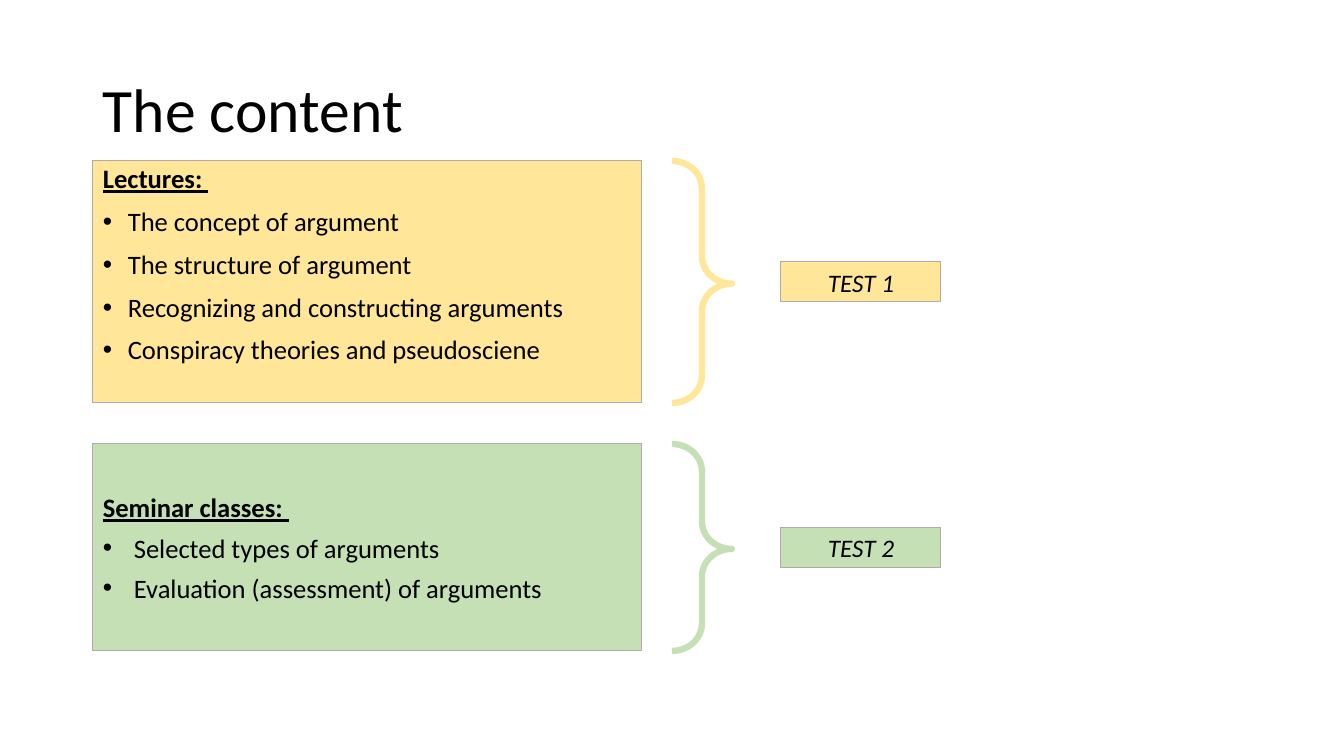
"""Build the course content slide: two topic boxes, each braced to its test."""
from lxml import etree
from pptx import Presentation
from pptx.dml.color import RGBColor
from pptx.enum.shapes import MSO_SHAPE
from pptx.enum.text import MSO_ANCHOR, PP_ALIGN
from pptx.oxml.ns import qn
from pptx.util import Pt

RECTANGLE, BRACE = MSO_SHAPE.RECTANGLE, MSO_SHAPE.RIGHT_BRACE
TOP, MIDDLE = MSO_ANCHOR.TOP, MSO_ANCHOR.MIDDLE
LEFT, CENTER = PP_ALIGN.LEFT, PP_ALIGN.CENTER

BLACK = RGBColor(0x00, 0x00, 0x00)
GRAY = RGBColor(0xAF, 0xAB, 0xAB)
YELLOW = RGBColor(0xFF, 0xE6, 0x99)
GREEN = RGBColor(0xC5, 0xE0, 0xB4)
FONT = "Calibri"

TITLE = "The content"
SECTIONS = [
    dict(heading="Lectures: ", test="TEST 1", color=YELLOW, top=161, height=242,
         anchor=TOP, indent=25, spacing=dict(line_spacing=0.9, space_before=Pt(10)),
         topics=["The concept of argument", "The structure of argument",
                 "Recognizing and constructing arguments",
                 "Conspiracy theories and pseudosciene"]),
    dict(heading="Seminar classes: ", test="TEST 2", color=GREEN, top=444, height=207,
         anchor=MIDDLE, indent=31, spacing=dict(space_after=Pt(6)),
         topics=["Selected types of arguments", "Evaluation (assessment) of arguments"]),
]

EMU_PER_PX = 914400 / 100.8
SLIDE_SIZE = (1344, 756)
TITLE_AREA = (93, 40, 1159, 146)
BOX_LEFT, BOX_WIDTH = 93, 549
BRACE_LEFT, BRACE_WIDTH = 672, 60
TEST_LEFT, TEST_WIDTH, TEST_HEIGHT = 781, 160, 40


def px(*lengths):
    return [round(length * EMU_PER_PX) for length in lengths]


def add_outlined(slide, preset, area, line_color, line_width, fill=None):
    shape = slide.shapes.add_shape(preset, *px(*area))
    shape.shadow.inherit = False
    if fill is None:
        shape.fill.background()
    else:
        shape.fill.solid()
        shape.fill.fore_color.rgb = fill
    shape.line.color.rgb = line_color
    shape.line.width = Pt(line_width)
    return shape


def write(paragraph, text, size, align=LEFT, **style):
    paragraph.alignment = align
    run = paragraph.add_run()
    run.text = text
    run.font.name, run.font.size = FONT, Pt(size)
    run.font.color.rgb = BLACK
    for name, value in style.items():
        setattr(run.font, name, value)


def add_bullet(paragraph, indent):
    properties = paragraph._p.get_or_add_pPr()
    margin = px(indent)[0]
    properties.set("marL", str(margin))
    properties.set("indent", str(-margin))
    etree.SubElement(properties, qn("a:buFont"), typeface="Arial")
    etree.SubElement(properties, qn("a:buChar"), char="•")


def add_topics(slide, section):
    area = (BOX_LEFT, section["top"], BOX_WIDTH, section["height"])
    frame = add_outlined(slide, RECTANGLE, area, GRAY, 0.75, section["color"]).text_frame
    frame.word_wrap = True
    frame.vertical_anchor = section["anchor"]
    for index, text in enumerate([section["heading"], *section["topics"]]):
        paragraph = frame.add_paragraph() if index else frame.paragraphs[0]
        if index:
            add_bullet(paragraph, section["indent"])
        for name, value in section["spacing"].items():
            if index or name != "space_before":
                setattr(paragraph, name, value)
        write(paragraph, text, 19, bold=not index, underline=not index)


def add_test(slide, section):
    top, height, color = section["top"], section["height"], section["color"]
    brace = add_outlined(slide, BRACE, (BRACE_LEFT, top, BRACE_WIDTH, height), color, 4.5)
    brace.adjustments[0], brace.adjustments[1] = 0.458, 0.507
    test_top = top + (height - TEST_HEIGHT) / 2
    area = (TEST_LEFT, test_top, TEST_WIDTH, TEST_HEIGHT)
    frame = add_outlined(slide, RECTANGLE, area, GRAY, 0.75, color).text_frame
    frame.word_wrap = True
    frame.vertical_anchor = TOP
    write(frame.paragraphs[0], section["test"], 18, CENTER, italic=True)


def main():
    deck = Presentation()
    deck.slide_width, deck.slide_height = px(*SLIDE_SIZE)
    slide = deck.slides.add_slide(deck.slide_layouts[6])
    title = slide.shapes.add_textbox(*px(*TITLE_AREA)).text_frame
    title.word_wrap = True
    title.vertical_anchor = MIDDLE
    title.paragraphs[0].line_spacing = 0.9
    write(title.paragraphs[0], TITLE, 44)
    for section in SECTIONS:
        add_topics(slide, section)
        add_test(slide, section)
    deck.save("out.pptx")


if __name__ == "__main__":
    main()
